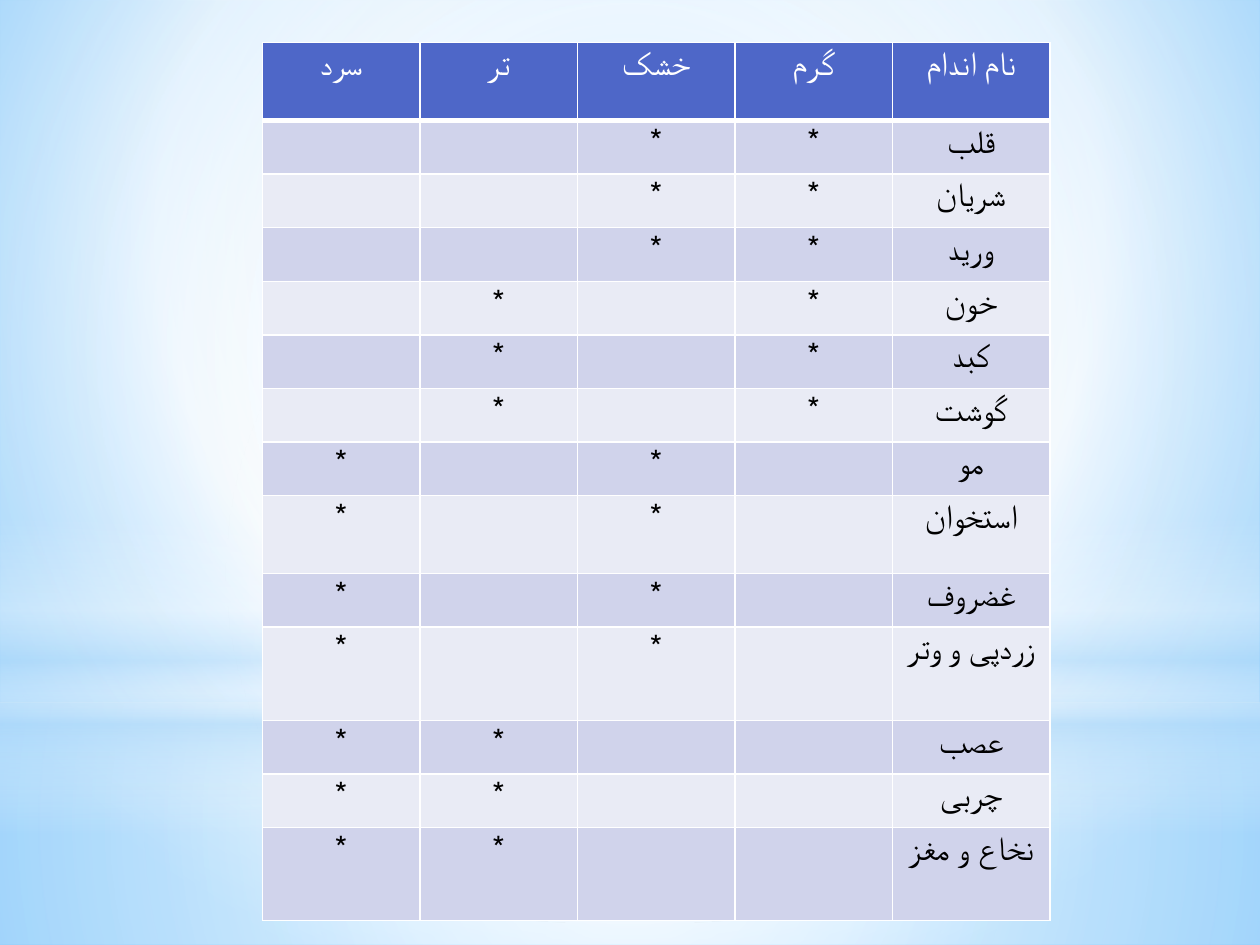
from dataclasses import dataclass

from lxml import etree
from pptx import Presentation, util as u
from pptx.dml import color
from pptx.enum import shapes, text
from pptx.oxml import ns


@dataclass(frozen=True)
class Theme:
    head: str = "4E67C8"
    odd: str = "D0D3EB"
    even: str = "E9EBF5"
    white: str = "FFFFFF"
    black: str = "000000"
    sky: str = "B4DCFA"
    rim: str = "5BB9FF"
    core: str = "9ED5FF"
    font: str = "Cabin"
    size: int = 19
    rule: int = 1
    bold: int = 3


T = Theme()
WIDE, HIGH = u.Cm(25.4), u.Cm(19.05)
HEAD = ["سرد", "تر", "خشک", "گرم", "نام اندام"]
COLD, WET, DRY, HOT = range(4)
ORGANS = [
    ("قلب", DRY, HOT),
    ("شریان", DRY, HOT),
    ("ورید", DRY, HOT),
    ("خون", WET, HOT),
    ("کبد", WET, HOT),
    ("گوشت", WET, HOT),
    ("مو", COLD, DRY),
    ("استخوان", COLD, DRY),
    ("غضروف", COLD, DRY),
    ("زردپی و وتر", COLD, DRY),
    ("عصب", COLD, WET),
    ("چربی", COLD, WET),
    ("نخاع و مغز", COLD, WET),
]
ROW = 1.08
TALL = {0: 1.57, 8: 1.57, 10: 1.88, 13: 1.88}
CENTER = (50, 50, 50, 50)


def add(top, tag, **attrs):
    return etree.SubElement(top, ns.qn(tag), attrs)


def blend(fill, root, stops, focus=None):
    fill.gradient()
    grad = root.find(".//" + ns.qn("a:gradFill"))
    for kid in list(grad):
        grad.remove(kid)
    group = add(grad, "a:gsLst")
    for pos, tone, alpha in stops:
        stop = add(group, "a:gs", pos=str(pos * 1000))
        clr = add(stop, "a:srgbClr", val=tone)
        if alpha < 100:
            add(clr, "a:alpha", val=str(alpha * 1000))
    if focus:
        way = add(grad, "a:path", path="circle")
        sides = {s: str(v * 1000) for s, v in zip("ltrb", focus)}
        add(way, "a:fillToRect", **sides)
    else:
        add(grad, "a:lin", ang="5400000", scaled="0")


def glow(slide, kind, top, high, stops, focus=None):
    shape = slide.shapes.add_shape(kind, 0, u.Cm(top), WIDE, u.Cm(high))
    shape.shadow.inherit = False
    shape.line.fill.background()
    blend(shape.fill, shape._element, stops, focus)


def scene(slide):
    back = slide.background.fill
    blend(back, slide._element,
          [(0, T.core, 100), (60, T.white, 100), (100, T.rim, 100)],
          (20, 10, 20, 60))
    rect, oval = shapes.MSO_SHAPE.RECTANGLE, shapes.MSO_SHAPE.OVAL
    glow(slide, rect, 14.17, 4.88,
         [(0, T.white, 91), (37, T.white, 76), (100, T.sky, 79)], CENTER)
    glow(slide, rect, 0, 14.17,
         [(0, T.white, 89), (48, T.white, 62), (100, T.sky, 79)], CENTER)
    glow(slide, rect, 10.46, 6.35,
         [(0, T.white, 0), (29, T.white, 30), (45, T.sky, 40),
          (55, T.white, 26), (65, T.sky, 60), (100, T.white, 0)])
    glow(slide, oval, 4.45, 14.17,
         [(0, T.white, 100), (56, T.white, 0)], CENTER)


def border(cell, base):
    props = cell._tc.get_or_add_tcPr()
    for spot, side in enumerate("LRTB"):
        width = base if side == "B" else T.rule
        line = etree.Element(ns.qn("a:ln" + side), w=str(u.Pt(width)))
        add(add(line, "a:solidFill"), "a:srgbClr", val=T.white)
        props.insert(spot, line)


def paint(cell, words, tone, ink, base):
    cell.fill.solid()
    cell.fill.fore_color.rgb = color.RGBColor.from_string(tone)
    border(cell, base)
    para = cell.text_frame.paragraphs[0]
    para.alignment = text.PP_ALIGN.CENTER
    para.font.size = u.Pt(T.size)
    if words:
        para.text = words
        para._p.get_or_add_pPr().set("rtl", "1")
        font = para.runs[0].font
        font.name, font.size = T.font, u.Pt(T.size)
        font.color.rgb = color.RGBColor.from_string(ink)


def grid(slide):
    rows = [HEAD]
    for name, *marks in ORGANS:
        rows.append(["*" if c in marks else "" for c in range(4)] + [name])
    highs = [TALL.get(n, ROW) for n in range(len(rows))]
    frame = slide.shapes.add_table(len(rows), len(HEAD), u.Cm(5.29),
                                   u.Cm(0.86), u.Cm(15.88),
                                   u.Cm(sum(highs)))
    table = frame.table
    for col in table.columns:
        col.width = u.Cm(3.175)
    for n, (row, high) in enumerate(zip(rows, highs)):
        table.rows[n].height = u.Cm(high)
        tone = T.head if n == 0 else T.odd if n % 2 else T.even
        ink = T.black if n else T.white
        base = T.rule if n else T.bold
        for c, words in enumerate(row):
            paint(table.cell(n, c), words, tone, ink, base)
            if n == 0:
                table.cell(n, c).text_frame.paragraphs[0].font.bold = False
                table.cell(n, c).text_frame.paragraphs[0].runs[0].font.bold = False


def main():
    deck = Presentation()
    deck.slide_width, deck.slide_height = WIDE, HIGH
    slide = deck.slides.add_slide(deck.slide_layouts[6])
    scene(slide)
    grid(slide)
    deck.save("out.pptx")


if __name__ == "__main__":
    main()
